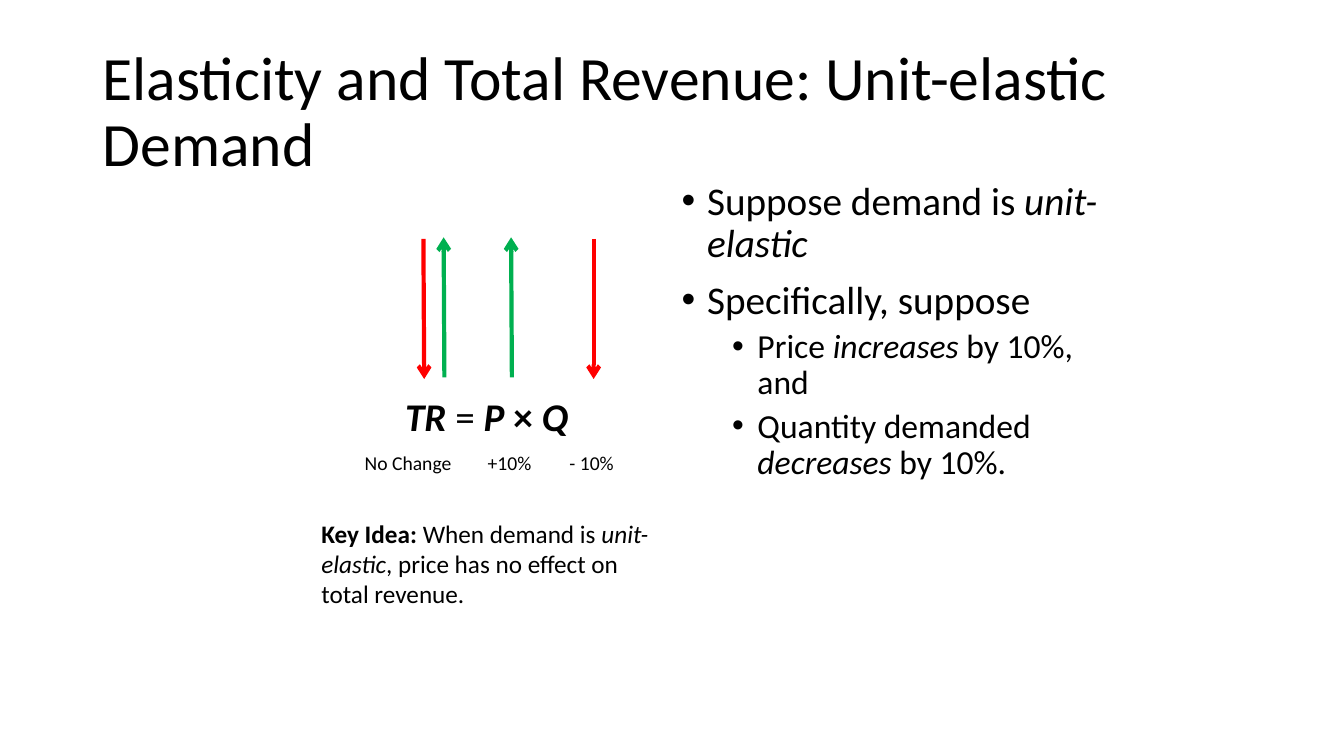
import pptx
import pptx.util
import pptx.dml.color
import pptx.enum.shapes
import pptx.enum.text
import pptx.oxml.ns
from lxml import etree

Cm, Pt = pptx.util.Cm, pptx.util.Pt
qn = pptx.oxml.ns.qn

COLORS = {"text": "000000", "rise": "00B050", "fall": "FF0000"}
FONT = "Calibri"

TITLE = [("Elasticity and Total Revenue: Unit-elastic Demand", "")]
BULLETS = [
    (0, [("Suppose demand is ", ""), ("unit-elastic", "i")]),
    (0, [("Specifically, suppose", "")]),
    (1, [("Price ", ""), ("increases", "i"), (" by 10%, and", "")]),
    (1, [("Quantity demanded ", ""), ("decreases", "i"), (" by 10%.", "")]),
]
LEVELS = [
    {"size": 28, "before": 10, "margin": 0.64},
    {"size": 24, "before": 5, "margin": 1.91},
]
HANGING = 0.64
EQUATION = [("TR", "bi"), (" = ", ""), ("P ", "bi"), ("× ", "b"), ("Q", "bi")]
KEY_IDEA = [
    ("Key Idea: ", "b"),
    ("When demand is ", ""),
    ("unit-elastic", "i"),
    (", price has no effect on total revenue.", ""),
]
EFFECTS = [("+10%", 12.04, 1.88), ("- 10%", 14.1, 1.98), ("No Change", 8.94, 3.25)]
EFFECT_TOP, EFFECT_HEIGHT = 11.24, 0.86
ARROWS = [
    ("rise", 12.9, 12.88),
    ("rise", 11.2, 11.18),
    ("fall", 14.96, 14.96),
    ("fall", 10.67, 10.69),
]
SPANS = {"rise": (9.51, 5.98), "fall": (6.02, 9.55)}


def color(name):
    return pptx.dml.color.RGBColor.from_string(COLORS[name])


def add_box(page, left, top, width, height):
    box = page.shapes.add_textbox(Cm(left), Cm(top), Cm(width), Cm(height))
    box.text_frame.word_wrap = True
    return box.text_frame


def write(para, spans, size):
    para.font.name = FONT
    para.font.size = Pt(size)
    para.font.color.rgb = color("text")
    for text, style in spans:
        span = para.add_run()
        span.text = text
        if "b" in style:
            span.font.bold = True
        if "i" in style:
            span.font.italic = True


def add_bullets(frame):
    for index, (level, spans) in enumerate(BULLETS):
        para = frame.add_paragraph() if index else frame.paragraphs[0]
        look = LEVELS[level]
        para.level = level
        para.line_spacing = 0.9
        if index:
            para.space_before = Pt(look["before"])
        properties = para._p.get_or_add_pPr()
        properties.set("marL", str(Cm(look["margin"])))
        properties.set("indent", str(-Cm(HANGING)))
        etree.SubElement(properties, qn("a:buFont"), typeface="Arial")
        etree.SubElement(properties, qn("a:buChar"), char="•")
        write(para, spans, look["size"])


def add_arrow(page, trend, start_x, end_x):
    start_y, end_y = SPANS[trend]
    arrow = page.shapes.add_connector(
        pptx.enum.shapes.MSO_CONNECTOR.STRAIGHT,
        Cm(start_x), Cm(start_y), Cm(end_x), Cm(end_y),
    )
    arrow.line.color.rgb = color(trend)
    arrow.line.width = Pt(3)
    etree.SubElement(arrow.line._get_or_add_ln(), qn("a:tailEnd"), type="arrow")
    etree.SubElement(arrow._element.spPr, qn("a:effectLst"))


def main():
    deck = pptx.Presentation()
    deck.slide_width, deck.slide_height = Cm(33.87), Cm(19.05)
    page = deck.slides.add_slide(deck.slide_layouts[6])

    title = add_box(page, 2.34, 1.02, 29.21, 3.68)
    title.vertical_anchor = pptx.enum.text.MSO_ANCHOR.MIDDLE
    title.paragraphs[0].line_spacing = 0.9
    write(title.paragraphs[0], TITLE, 44)

    add_bullets(add_box(page, 16.93, 4.45, 11.43, 8.33))
    write(add_box(page, 9.96, 9.75, 5.72, 1.45).paragraphs[0], EQUATION, 28)
    for trend, start_x, end_x in ARROWS:
        add_arrow(page, trend, start_x, end_x)
    for text, left, width in EFFECTS:
        label = add_box(page, left, EFFECT_TOP, width, EFFECT_HEIGHT)
        write(label.paragraphs[0], [(text, "")], 14)
    write(add_box(page, 7.85, 12.93, 9.09, 2.57).paragraphs[0], KEY_IDEA, 18)

    deck.save("out.pptx")


if __name__ == "__main__":
    main()
